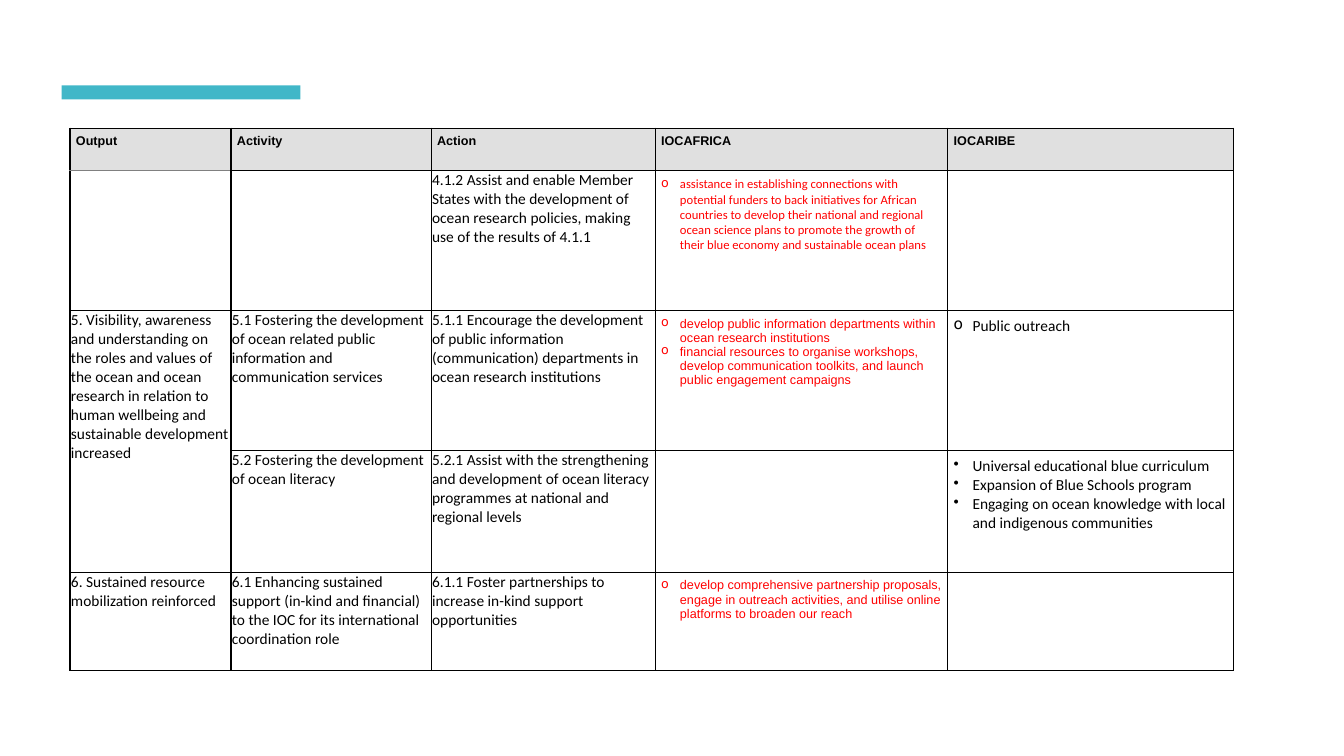
from lxml.etree import SubElement
from pptx import Presentation
from pptx.dml.color import RGBColor
from pptx.enum.shapes import MSO_SHAPE
from pptx.oxml.ns import qn
from pptx.util import Pt

SLIDE_SIZE = (960, 540)
ACCENT_BAR = (44, 61, 170.5, 10)
TABLE_LEFT, TABLE_TOP = 50, 91.5
COLUMN_WIDTHS = [115, 143, 160, 209, 204]
ROW_HEIGHTS = [30.5, 100, 100, 87, 70]
ACCENT, HEADER_GREY, BLACK, RED = "41B7C8", "E0E0E0", "000000", "FF0000"
SOFT_LINE = "808080"

STYLES = {
    "header": dict(font="Arial", size=9, color=BLACK, bold=True, inset=4.3),
    "plan": dict(font="Calibri", size=11, color=BLACK, inset=(0.7, 0), after=3),
    "support": dict(font="Calibri", size=9, color=RED, inset=4.3, bullet="o"),
    "need": dict(font="Arial", size=9, color=RED, inset=4.3, bullet="o"),
    "outreach": dict(font="Calibri", size=11, color=BLACK, inset=4.3, bullet="o"),
    "literacy": dict(font="Calibri", size=11, color=BLACK, inset=4.3, bullet="•"),
}

HEADINGS = ["Output", "Activity", "Action", "IOCAFRICA", "IOCARIBE"]
PLAN = [
    [
        None,
        None,
        ("plan", ["4.1.2 Assist and enable Member States with the development of ocean "
                  "research policies, making use of the results of 4.1.1"]),
        ("support", ["assistance in establishing connections with potential funders to back "
                     "initiatives for African countries to develop their national and regional "
                     "ocean science plans to promote the growth of their blue economy and "
                     "sustainable ocean plans"]),
        None,
    ],
    [
        ("plan", ["5. Visibility, awareness and understanding on the roles and values of the "
                  "ocean and ocean research in relation to human wellbeing and sustainable "
                  "development increased"]),
        ("plan", ["5.1 Fostering the development of ocean related public information and "
                  "communication services"]),
        ("plan", ["5.1.1 Encourage the development of public information (communication) "
                  "departments in ocean research institutions"]),
        ("need", ["develop public information departments within ocean research institutions",
                  "financial resources to organise workshops, develop communication toolkits, "
                  "and launch public engagement campaigns"]),
        ("outreach", ["Public outreach"]),
    ],
    [
        None,
        ("plan", ["5.2 Fostering the development of ocean literacy"]),
        ("plan", ["5.2.1 Assist with the strengthening and development of ocean literacy "
                  "programmes at national and regional levels"]),
        None,
        ("literacy", ["Universal educational blue curriculum",
                      "Expansion of Blue Schools program",
                      "Engaging on ocean knowledge with local and indigenous communities"]),
    ],
    [
        ("plan", ["6. Sustained resource mobilization reinforced"]),
        ("plan", ["6.1 Enhancing sustained support (in-kind and financial) to the IOC for its "
                  "international coordination role"]),
        ("plan", ["6.1.1 Foster partnerships to increase in-kind support opportunities"]),
        ("need", ["develop comprehensive partnership proposals, engage in outreach activities, "
                  "and utilise online platforms to broaden our reach"]),
        None,
    ],
]


def paint(color_format, color):
    color_format.rgb = RGBColor.from_string(color)


def fill_solid(fill, color):
    fill.solid()
    paint(fill.fore_color, color)


def draw_borders(cell, soft_side):
    properties = cell._tc.get_or_add_tcPr()
    for side in ("lnL", "lnR", "lnT", "lnB"):
        color, width = (SOFT_LINE, 0.5) if side == soft_side else (BLACK, 1)
        line = SubElement(properties, qn(f"a:{side}"), w=str(Pt(width)))
        SubElement(SubElement(line, qn("a:solidFill")), qn("a:srgbClr"), val=color)


def write_cell(cell, style, lines):
    inset = style["inset"]
    across, down = inset if isinstance(inset, tuple) else (inset, inset)
    cell.margin_left = cell.margin_right = Pt(across)
    cell.margin_top = cell.margin_bottom = Pt(down)
    cell.text_frame.text = "\n".join(lines)
    for paragraph in cell.text_frame.paragraphs:
        paragraph.space_after = Pt(style.get("after", 0))
        if "bullet" in style:
            properties = paragraph._p.get_or_add_pPr()
            properties.set("marL", str(Pt(13.5)))
            properties.set("indent", str(-Pt(13.5)))
            SubElement(properties, qn("a:buChar"), char=style["bullet"])
        for run in paragraph.runs:
            run.font.name = style["font"]
            run.font.size = Pt(style["size"])
            run.font.bold = style.get("bold", False)
            paint(run.font.color, style["color"])


def add_accent_bar(slide):
    bar = slide.shapes.add_shape(MSO_SHAPE.RECTANGLE, *map(Pt, ACCENT_BAR))
    bar.shadow.inherit = False
    fill_solid(bar.fill, ACCENT)
    bar.line.fill.background()


def add_plan_table(slide):
    rows = [[("header", [heading]) for heading in HEADINGS]] + PLAN
    plan = slide.shapes.add_table(
        len(rows), len(HEADINGS), Pt(TABLE_LEFT), Pt(TABLE_TOP),
        Pt(sum(COLUMN_WIDTHS)), Pt(sum(ROW_HEIGHTS))).table
    plan.first_row = plan.horz_banding = False
    for column, width in zip(plan.columns, COLUMN_WIDTHS):
        column.width = Pt(width)
    for row, height in zip(plan.rows, ROW_HEIGHTS):
        row.height = Pt(height)
    plan.cell(2, 0).merge(plan.cell(3, 0))
    soft_sides = {(0, 0): "lnB", (1, 0): "lnT"}
    for r, entries in enumerate(rows):
        for c, entry in enumerate(entries):
            cell = plan.cell(r, c)
            draw_borders(cell, soft_sides.get((r, c)))
            if r == 0:
                fill_solid(cell.fill, HEADER_GREY)
            else:
                cell.fill.background()
            if entry:
                style, lines = entry
                write_cell(cell, STYLES[style], lines)


def main():
    deck = Presentation()
    deck.slide_width, deck.slide_height = map(Pt, SLIDE_SIZE)
    slide = deck.slides.add_slide(deck.slide_layouts[6])
    add_accent_bar(slide)
    add_plan_table(slide)
    deck.save("out.pptx")


if __name__ == "__main__":
    main()
